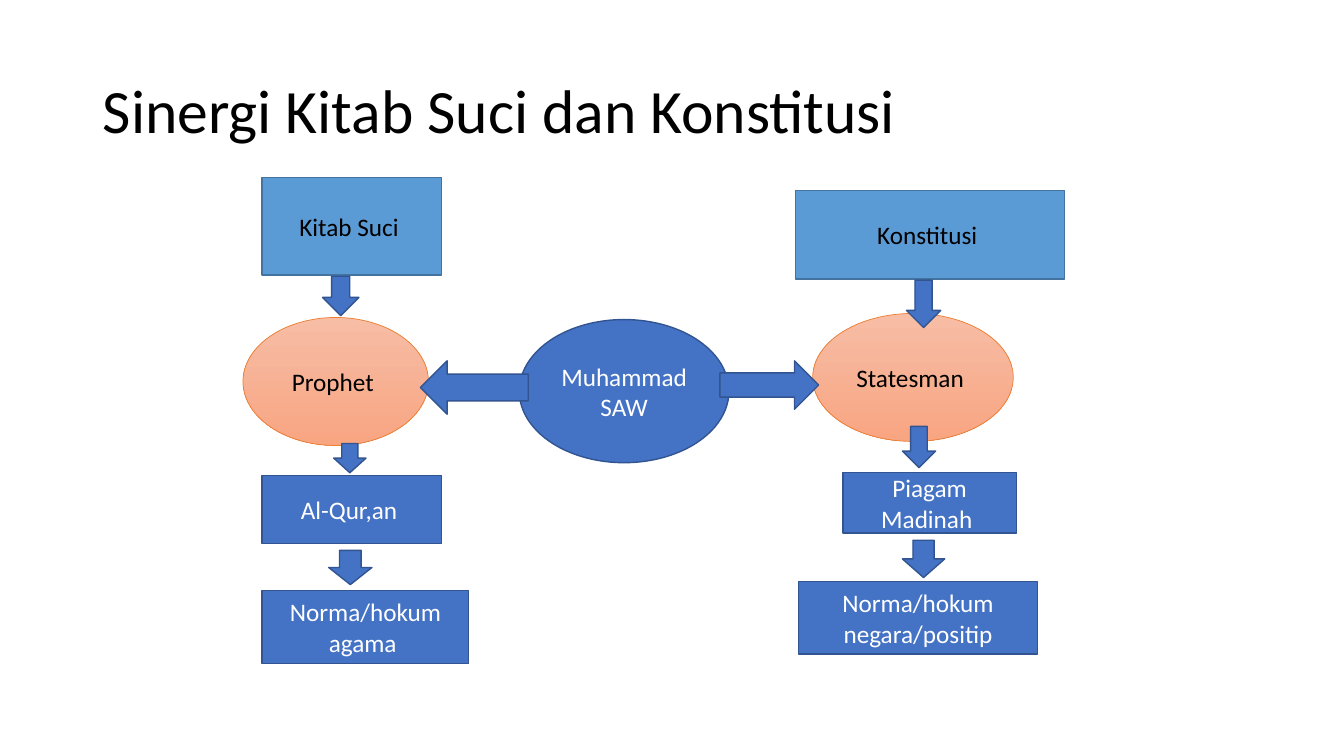
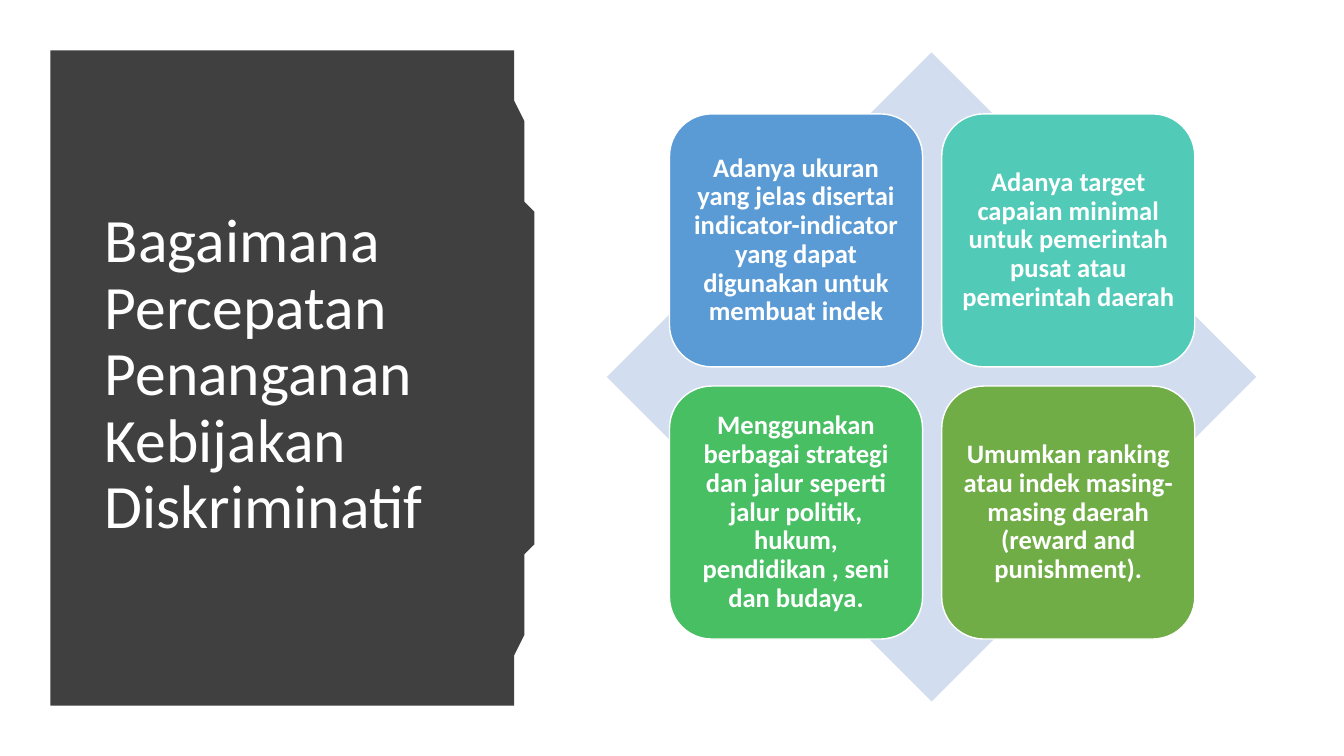
"""Builds two slides on holy scripture, constitution and discriminatory policy."""
from itertools import product
from pptx import Presentation
from pptx.dml.color import RGBColor
from pptx.enum.shapes import MSO_SHAPE as SHAPE
from pptx.enum.text import MSO_ANCHOR as ANCHOR, MSO_AUTO_SIZE as AUTO, PP_ALIGN as ALIGN
from pptx.util import Inches, Pt

COLORS = {"black": "000000", "white": "FFFFFF", "blue": "4472C4", "blue_edge": "325491",
          "sky": "5B9BD5", "sky_edge": "43739E", "peach": "F7BDA5", "salmon": "F8A582",
          "orange": "ED7D31", "dark": "404040", "pale": "D2DEEF", "teal": "52CAB8",
          "green": "49BF64", "olive": "70AD47"}
RGB = {name: RGBColor.from_string(value) for name, value in COLORS.items()}
FONT = "Calibri"
STYLES = {
    "blue": (["blue"], "blue_edge", 1, "white"),
    "sky": (["sky"], "sky_edge", 1, "black"),
    "peach": (["peach", "salmon"], "orange", 0.5, "black"),
    "pale": (["pale"], None, 0, "black"),
    **{name: ([name], "white", 1, "white") for name in ("teal", "green", "olive")},
    "sky_card": (["sky"], "white", 1, "white"),
}

prs = Presentation()
prs.slide_width, prs.slide_height = Inches(13.33), Inches(7.5)
CELL = prs.slide_height / 75


def write(sp, text, size, color, align, bold=False, spacing=None):
    """Set the text of a shape in one style, centred vertically."""
    tf = sp.text_frame
    tf.text = text
    tf.word_wrap, tf.auto_size, tf.vertical_anchor = True, AUTO.NONE, ANCHOR.MIDDLE
    p = tf.paragraphs[0]
    p.alignment, p.line_spacing = align, spacing
    for r in p.runs:
        r.font.name, r.font.size, r.font.bold = FONT, Pt(size), bold
        r.font.color.rgb = RGB[color]


def add(s, kind, box, style, text="", size=18, **options):
    """Add a styled preset shape; box is left, top, width, height in cells."""
    fills, edge, width, ink = STYLES[style]
    sp = s.shapes.add_shape(kind, *(round(n * CELL) for n in box))
    sp.shadow.inherit = False
    if len(fills) > 1:
        sp.fill.gradient()
        sp.fill.gradient_angle = 270
        for stop, fill, place in zip(sp.fill.gradient_stops, fills, (0, 1)):
            stop.color.rgb, stop.position = RGB[fill], place
    else:
        sp.fill.solid()
        sp.fill.fore_color.rgb = RGB[fills[0]]
    if edge:
        sp.line.color.rgb, sp.line.width = RGB[edge], Pt(width)
    else:
        sp.line.fill.background()
    if text:
        write(sp, text, size, ink, ALIGN.CENTER, **options)
    return sp


slides = []
for text, box, color in [
    ("Sinergi Kitab Suci dan Konstitusi", (9.2, 4, 115, 14.5), "black"),
    ("Bagaimana Percepatan Penanganan Kebijakan Diskriminatif", (9.4, 11.1, 37.4, 52.4), "white"),
]:
    s = prs.slides.add_slide(prs.slide_layouts[5])
    title = s.shapes.title
    title.left, title.top, title.width, title.height = (round(n * CELL) for n in box)
    write(title, text, 44, color, ALIGN.LEFT, spacing=0.9)
    slides.append(s)

s = slides[0]
NODES = [
    (SHAPE.OVAL, (51.5, 31.7, 20.8, 14.2), "blue", "Muhammad SAW"),
    (SHAPE.OVAL, (24.1, 31.5, 18.4, 12.7), "peach", "Prophet "),
    (SHAPE.OVAL, (80.6, 31.1, 19.9, 12.7), "peach", "Statesman "),
    (SHAPE.RECTANGLE, (26, 17.6, 17.8, 9.7), "sky", "Kitab Suci "),
    (SHAPE.RECTANGLE, (78.9, 18.9, 26.7, 8.8), "sky", "Konstitusi "),
    (SHAPE.RECTANGLE, (26, 47.2, 17.8, 6.7), "blue", "Al-Qur,an "),
    (SHAPE.RECTANGLE, (83.6, 46.9, 17.2, 6), "blue", "Piagam Madinah "),
    (SHAPE.RECTANGLE, (26, 58.6, 20.5, 7.2), "blue", "Norma/hokum agama "),
    (SHAPE.RECTANGLE, (79.2, 57.7, 23.7, 7.2), "blue", "Norma/hokum negara/positip"),
]
for node in NODES:
    add(s, *node)

DOWN_ARROWS = [(32, 27.4, 3.6, 3.9), (33.1, 44, 3.2, 2.9), (32.6, 54.6, 4.3, 3.4),
               (89.9, 27.8, 3.4, 4.7), (89.5, 42.3, 3.3, 4.1), (89.5, 53.6, 4.2, 3.7)]
for box in DOWN_ARROWS:
    add(s, SHAPE.DOWN_ARROW, box, "blue")
add(s, SHAPE.LEFT_ARROW, (41.7, 35.8, 10.7, 5.3), "blue")
add(s, SHAPE.RIGHT_ARROW, (71.4, 35.8, 9.8, 4.8), "blue")

s = slides[1]
LEFT, EDGE, TOP, SIDE, BULGE, STEPS = 5.3, 50.8, 5.2, 64.4, 2.4, 40
curve = [(EDGE + BULGE * 4 * t * (1 - t), TOP + SIDE * t)
         for t in (i / STEPS for i in range(STEPS + 1))]
outline = s.shapes.build_freeform(LEFT, TOP, scale=CELL)
outline.add_line_segments(curve + [(LEFT, TOP + SIDE)], close=True)
panel = outline.convert_to_shape()
panel.shadow.inherit = False
panel.fill.solid()
panel.fill.fore_color.rgb = RGB["dark"]
panel.line.fill.background()
s.shapes.title._element.addprevious(panel._element)

add(s, SHAPE.DIAMOND, (60.2, TOP, SIDE, SIDE), "pale")
CARD, PITCH = 25.1, 27
CARDS = [
    ("sky_card", "Adanya ukuran yang jelas disertai indicator-indicator yang dapat "
                 "digunakan untuk membuat indek"),
    ("teal", "Adanya target capaian minimal untuk pemerintah pusat atau pemerintah daerah "),
    ("green", "Menggunakan berbagai strategi dan jalur seperti jalur politik, hukum, "
              "pendidikan , seni dan budaya."),
    ("olive", "Umumkan ranking atau indek masing-masing daerah (reward and punishment)."),
]
for (row, col), (style, text) in zip(product(range(2), repeat=2), CARDS):
    box = (66.4 + col * PITCH, 11.3 + row * PITCH, CARD, CARD)
    tf = add(s, SHAPE.ROUNDED_RECTANGLE, box, style, text, 19, bold=True, spacing=0.9).text_frame
    tf.margin_left = tf.margin_right = tf.margin_top = tf.margin_bottom = Inches(0.08)

prs.save("out.pptx")
